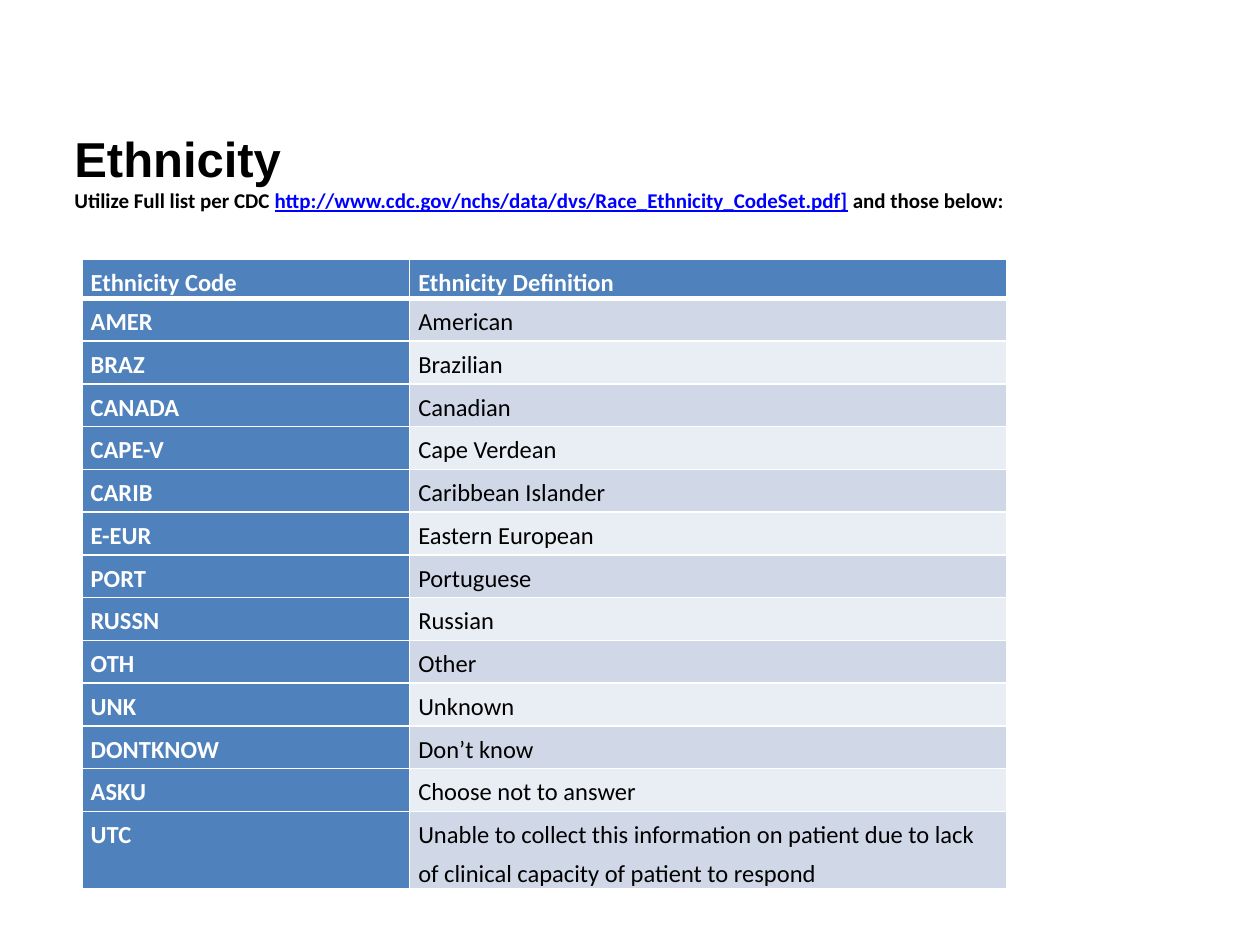
from typing import NamedTuple

from lxml import etree
from pptx import Presentation
from pptx.dml.color import RGBColor
from pptx.enum.text import MSO_ANCHOR, MSO_AUTO_SIZE, PP_ALIGN
from pptx.oxml.ns import qn
from pptx.util import Inches, Pt

LEFT = PP_ALIGN.LEFT
MIDDLE = MSO_ANCHOR.MIDDLE
NO_FIT = MSO_AUTO_SIZE.NONE
TITLE_ONLY = 5
BLUE, WHITE, BLACK, LINK = "4F81BD", "FFFFFF", "000000", "0000FF"
BANDS = ("D0D8E8", "E9EDF4")

prs = Presentation()
prs.slide_width, prs.slide_height = Inches(10), Inches(7.5)


class Style(NamedTuple):
    size: float
    font: str = "Calibri"
    color: str = BLACK
    bold: bool = True
    underline: bool = False


class Ethnicity(NamedTuple):
    code: str
    definition: str


HEADER = Ethnicity("Ethnicity Code", "Ethnicity Definition")
ETHNICITIES = [
    Ethnicity("AMER", "American"),
    Ethnicity("BRAZ", "Brazilian"),
    Ethnicity("CANADA", "Canadian"),
    Ethnicity("CAPE-V", "Cape Verdean"),
    Ethnicity("CARIB", "Caribbean Islander"),
    Ethnicity("E-EUR", "Eastern European"),
    Ethnicity("PORT", "Portuguese"),
    Ethnicity("RUSSN", "Russian"),
    Ethnicity("OTH", "Other"),
    Ethnicity("UNK", "Unknown"),
    Ethnicity("DONTKNOW", "Don’t know"),
    Ethnicity("ASKU", "Choose not to answer"),
    Ethnicity("UTC", "Unable to collect this information on patient due to lack "
                     "of clinical capacity of patient to respond"),
]


def across(percent: float) -> int:
    return round(prs.slide_width * percent / 100)


def down(percent: float) -> int:
    return round(prs.slide_height * percent / 100)


def rgb(color: str) -> RGBColor:
    return RGBColor.from_string(color)


def add_run(p, text: str, style: Style) -> None:
    r = p.add_run()
    r.text = text
    r.font.size, r.font.name = Pt(style.size), style.font
    r.font.bold, r.font.underline = style.bold, style.underline
    r.font.color.rgb = rgb(style.color)


def add_border(cell, side: str, width: float) -> None:
    ln = etree.SubElement(cell._tc.get_or_add_tcPr(), qn(f"a:ln{side}"), w=str(Pt(width)))
    fill = etree.SubElement(ln, qn("a:solidFill"))
    etree.SubElement(fill, qn("a:srgbClr"), val=WHITE)


def fill_cell(cell, text: str, fill: str, style: Style, bottom: float) -> None:
    for side, width in (("L", 1), ("R", 1), ("T", 1), ("B", bottom)):
        add_border(cell, side, width)
    cell.fill.solid()
    cell.fill.fore_color.rgb = rgb(fill)
    cell.margin_left = cell.margin_right = Inches(0.07)
    cell.margin_top = cell.margin_bottom = 0
    p = cell.text_frame.paragraphs[0]
    p.line_spacing, p.space_after = 1.3, Pt(3)
    add_run(p, text, style)


def add_title(s) -> None:
    sp = s.shapes.title
    sp.left, sp.top, sp.width, sp.height = across(4.9), down(11.07), across(87.9), down(14)
    tf = sp.text_frame
    tf.word_wrap, tf.auto_size, tf.vertical_anchor = True, NO_FIT, MIDDLE
    p = tf.paragraphs[0]
    p.alignment = LEFT
    add_run(p, "Ethnicity", Style(28, "Arial"))
    p.add_line_break()
    note = Style(12)
    add_run(p, "Utilize Full list per CDC ", note)
    add_run(p, "http://www.cdc.gov/nchs/data/dvs/Race_Ethnicity_CodeSet.pdf]",
            note._replace(color=LINK, underline=True))
    add_run(p, " and those below:", note)


def add_ethnicity_table(s) -> None:
    heights = [3.33] + [4.53] * (len(ETHNICITIES) - 1) + [6.53]
    widths = (26, 47.4)
    table = s.shapes.add_table(len(heights), len(widths), across(6.5), down(27.47),
                               across(sum(widths)), down(sum(heights))).table
    for column, width in zip(table.columns, widths):
        column.width = across(width)
    for row, height in zip(table.rows, heights):
        row.height = down(height)

    label = Style(14, color=WHITE)
    body = Style(14, bold=False)
    # Header row, set off by a thicker rule
    for col, text in enumerate(HEADER):
        fill_cell(table.cell(0, col), text, BLUE, label, 3)
    # Code column in blue, definitions in alternating bands
    for i, item in enumerate(ETHNICITIES):
        fill_cell(table.cell(i + 1, 0), item.code, BLUE, label, 1)
        fill_cell(table.cell(i + 1, 1), item.definition, BANDS[i % 2], body, 1)
    # The header rule is shared with the first body row
    for cell in table.rows[1].cells:
        cell._tc.tcPr.find(qn("a:lnT")).set("w", str(Pt(3)))


def main() -> None:
    s = prs.slides.add_slide(prs.slide_layouts[TITLE_ONLY])
    add_ethnicity_table(s)
    add_title(s)
    prs.save("out.pptx")


if __name__ == "__main__":
    main()
